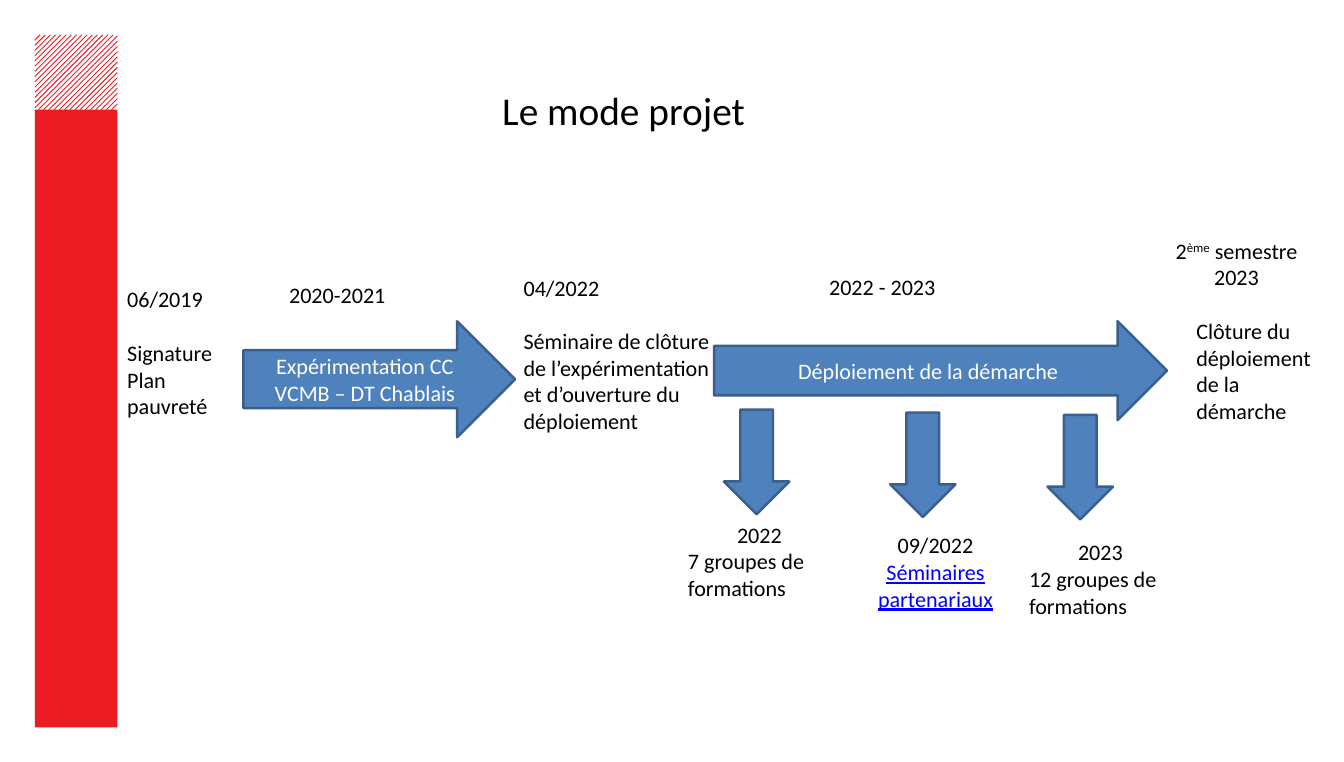
from dataclasses import dataclass

from lxml import etree
from pptx import Presentation
from pptx import util as u
from pptx.dml.color import RGBColor
from pptx.enum import shapes, text
from pptx.oxml import ns
from pptx.slide import Slide
from pptx.text.text import TextFrame

LEFT, CENTER = text.PP_ALIGN.LEFT, text.PP_ALIGN.CENTER
RIGHT_ARROW, DOWN_ARROW = shapes.MSO_SHAPE.RIGHT_ARROW, shapes.MSO_SHAPE.DOWN_ARROW


@dataclass(frozen=True)
class Theme:
    red: RGBColor = RGBColor(0xED, 0x1C, 0x24)
    blue: RGBColor = RGBColor(0x4F, 0x81, 0xBD)
    blue_edge: RGBColor = RGBColor(0x3A, 0x5F, 0x8C)
    ink: RGBColor = RGBColor(0, 0, 0)
    white: RGBColor = RGBColor(255, 255, 255)
    link: RGBColor = RGBColor(0, 0, 255)
    font: str = "Calibri"
    title_size: u.Pt = u.Pt(32)
    body_size: u.Pt = u.Pt(18)
    date_gap: u.Pt = u.Pt(22)
    edge_width: u.Pt = u.Pt(2)
    hatch_width: u.Pt = u.Pt(0.75)


THEME = Theme()


@dataclass(frozen=True)
class Box:
    """Left, top, width and height in centimetres."""
    left: float
    top: float
    width: float
    height: float

    def emu(self) -> tuple[u.Cm, u.Cm, u.Cm, u.Cm]:
        return u.Cm(self.left), u.Cm(self.top), u.Cm(self.width), u.Cm(self.height)


@dataclass(frozen=True)
class Run:
    wording: str
    superscript: bool = False
    link: bool = False


@dataclass(frozen=True)
class Line:
    runs: tuple[Run, ...]
    align: text.PP_ALIGN = LEFT
    gap: bool = False


@dataclass(frozen=True)
class Caption:
    box: Box
    lines: tuple[Line, ...]


@dataclass(frozen=True)
class Arrow:
    kind: shapes.MSO_SHAPE
    box: Box
    label: str = ""


def line(wording: str, align: text.PP_ALIGN = LEFT, gap: bool = False, link: bool = False) -> Line:
    return Line((Run(wording, link=link),), align, gap)


# Sidebar: hatched head above a solid band
HATCH = Box(1, 1, 2.37, 2.15)
BAND = Box(1, 3.15, 2.37, 17.73)
HATCH_STEP = 0.15
HATCH_COUNT = 29

TITLE_BOX = Box(6.5, 2.34, 22.81, 1.63)

# Timeline arrows, then the arrows down to the deployment steps
ARROWS = (
    Arrow(RIGHT_ARROW, Box(6.99, 9.22, 7.8, 3.33), "Expérimentation CC VCMB – DT Chablais"),
    Arrow(RIGHT_ARROW, Box(20.5, 9.22, 13, 2.84), "Déploiement de la démarche"),
    Arrow(DOWN_ARROW, Box(20.78, 11.76, 1.88, 3)),
    Arrow(DOWN_ARROW, Box(25.55, 11.84, 1.88, 3)),
    Arrow(DOWN_ARROW, Box(30.07, 11.91, 1.88, 3)),
)

CAPTIONS = (
    Caption(Box(3.4, 8.08, 3.58, 4.11),
            (line("06/2019"), line("Signature Plan pauvreté", gap=True))),
    Caption(Box(8.05, 7.95, 5.59, 1.02), (line("2020-2021"),)),
    Caption(Box(14.78, 7.74, 6, 5.64),
            (line("04/2022"),
             line("Séminaire de clôture de l’expérimentation et d’ouverture du déploiement", gap=True))),
    Caption(Box(23.55, 7.72, 5.72, 1.02), (line("2022 - 2023"),)),
    Caption(Box(32.89, 6.68, 5.21, 1.8),
            (Line((Run("2"), Run("ème", superscript=True), Run(" semestre 2023")), CENTER),)),
    Caption(Box(34.09, 8.99, 3.99, 3.33), (line("Clôture du déploiement de la démarche"),)),
    Caption(Box(19.5, 14.83, 4.6, 2.57),
            (line("2022", CENTER), line("7 groupes de formations"))),
    Caption(Box(24.76, 15.14, 4.19, 2.57),
            (line("09/2022", CENTER), line("Séminaires partenariaux", CENTER, link=True))),
    Caption(Box(29.29, 15.34, 4.6, 2.57),
            (line("2023", CENTER), line("12 groupes de formations"))),
)


def write_lines(frame: TextFrame, lines: tuple[Line, ...], color: RGBColor, size: u.Pt) -> None:
    frame.word_wrap = True
    for index, entry in enumerate(lines):
        paragraph = frame.add_paragraph() if index else frame.paragraphs[0]
        paragraph.alignment = entry.align
        paragraph.font.name = THEME.font
        paragraph.font.size = size
        paragraph.font.color.rgb = color
        if entry.gap:
            paragraph.space_before = THEME.date_gap
        for part in entry.runs:
            run = paragraph.add_run()
            run.text = part.wording
            if part.link:
                run.font.color.rgb = THEME.link
                run.font.underline = True
            if part.superscript:
                run.font._element.set("baseline", "30000")


def draw_sidebar(slide: Slide) -> None:
    band = slide.shapes.add_shape(shapes.MSO_SHAPE.RECTANGLE, *BAND.emu())
    band.shadow.inherit = False
    band.fill.solid()
    band.fill.fore_color.rgb = THEME.red
    band.line.fill.background()

    # Each diagonal is clipped to the hatched area
    for number in range(1, HATCH_COUNT + 1):
        reach = number * HATCH_STEP
        stroke = slide.shapes.add_connector(
            shapes.MSO_CONNECTOR.STRAIGHT,
            u.Cm(HATCH.left + min(reach, HATCH.width)),
            u.Cm(HATCH.top + max(0, reach - HATCH.width)),
            u.Cm(HATCH.left + max(0, reach - HATCH.height)),
            u.Cm(HATCH.top + min(reach, HATCH.height)))
        stroke.line.color.rgb = THEME.red
        stroke.line.width = THEME.hatch_width
        etree.SubElement(stroke._element.spPr, ns.qn("a:effectLst"))


def draw_title(slide: Slide) -> None:
    title = slide.shapes.title
    title.left, title.top, title.width, title.height = TITLE_BOX.emu()
    write_lines(title.text_frame, (line("Le mode projet", CENTER),), THEME.ink, THEME.title_size)


def draw_arrow(slide: Slide, arrow: Arrow) -> None:
    shape = slide.shapes.add_shape(arrow.kind, *arrow.box.emu())
    shape.shadow.inherit = False
    shape.fill.solid()
    shape.fill.fore_color.rgb = THEME.blue
    shape.line.color.rgb = THEME.blue_edge
    shape.line.width = THEME.edge_width
    if arrow.label:
        shape.text_frame.vertical_anchor = text.MSO_ANCHOR.MIDDLE
        write_lines(shape.text_frame, (line(arrow.label, CENTER),), THEME.white, THEME.body_size)


def draw_caption(slide: Slide, caption: Caption) -> None:
    frame = slide.shapes.add_textbox(*caption.box.emu()).text_frame
    write_lines(frame, caption.lines, THEME.ink, THEME.body_size)


def main() -> None:
    deck = Presentation()
    deck.slide_width, deck.slide_height = u.Cm(38.58), u.Cm(21.87)
    slide = deck.slides.add_slide(deck.slide_layouts.get_by_name("Title Only"))
    draw_sidebar(slide)
    draw_title(slide)
    for arrow in ARROWS:
        draw_arrow(slide, arrow)
    for caption in CAPTIONS:
        draw_caption(slide, caption)
    deck.save("out.pptx")


if __name__ == "__main__":
    main()
